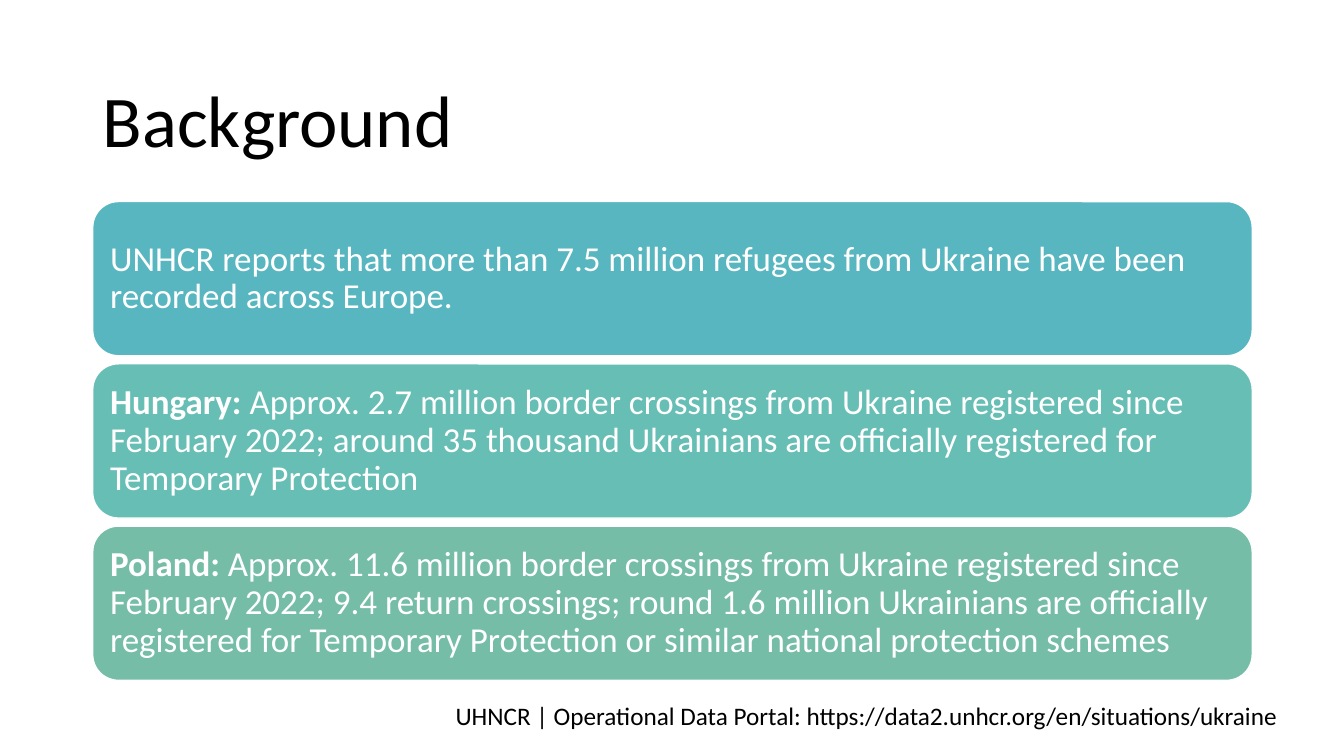
"""Build the Background slide with three stacked fact cards and a source line."""
from dataclasses import dataclass

from pptx import Presentation
from pptx.dml.color import RGBColor
from pptx.enum.shapes import MSO_SHAPE
from pptx.enum.text import MSO_ANCHOR, MSO_AUTO_SIZE, PP_ALIGN
from pptx.util import Inches, Pt

ROUNDED = MSO_SHAPE.ROUNDED_RECTANGLE
MIDDLE, TOP = MSO_ANCHOR.MIDDLE, MSO_ANCHOR.TOP
LEFT = PP_ALIGN.LEFT
FIXED = MSO_AUTO_SIZE.NONE
TITLE_ONLY = 5
FONT = "Calibri"
BLACK, WHITE = "000000", "FFFFFF"
MARGIN, CONTENT_WIDTH = 0.92, 11.5
CARD_TOP, CARD_HEIGHT, CARD_STEP = 2.0, 1.53, 1.61


@dataclass
class Card:
    fill: str
    text: str
    country: str = ""


CARDS = [
    Card("58B6C0", "UNHCR reports that more than 7.5 million refugees from Ukraine "
         "have been recorded across Europe."),
    Card("67BEB5", "Approx. 2.7 million border crossings from Ukraine registered since "
         "February 2022; around 35 thousand Ukrainians are officially registered for "
         "Temporary Protection", "Hungary: "),
    Card("75BDA7", "Approx. 11.6 million border crossings from Ukraine registered since "
         "February 2022; 9.4 return crossings; round 1.6 million Ukrainians are officially "
         "registered for Temporary Protection or similar national protection schemes",
         "Poland: "),
]
SOURCE = "UHNCR | Operational Data Portal: https://data2.unhcr.org/en/situations/ukraine"


def color(value: str) -> RGBColor:
    return RGBColor.from_string(value)


def write(box, text: str, *, size: float, ink: str, lead: str = "",
          spacing: float = 1.0, anchor=MIDDLE) -> None:
    frame = box.text_frame
    frame.word_wrap = True
    frame.auto_size = FIXED
    frame.vertical_anchor = anchor
    para = frame.paragraphs[0]
    para.alignment = LEFT
    para.line_spacing = spacing
    for part, bold in ((lead, True), (text, False)):
        if part:
            span = para.add_run()
            span.text = part
            span.font.name = FONT
            span.font.size = Pt(size)
            span.font.bold = bold
            span.font.color.rgb = color(ink)


def add_title(page, text: str) -> None:
    title = page.shapes.title
    title.left, title.top = Inches(MARGIN), Inches(0.61)
    title.width, title.height = Inches(CONTENT_WIDTH), Inches(1.24)
    write(title, text, size=52, ink=BLACK, spacing=0.9)


def add_card(page, card: Card, top: float) -> None:
    box = page.shapes.add_shape(ROUNDED, Inches(MARGIN), Inches(top),
                                Inches(CONTENT_WIDTH), Inches(CARD_HEIGHT))
    box.shadow.inherit = False
    box.fill.solid()
    box.fill.fore_color.rgb = color(card.fill)
    box.line.color.rgb = color(WHITE)
    box.line.width = Pt(1)
    frame = box.text_frame
    frame.margin_left = frame.margin_right = Inches(0.1)
    frame.margin_top = frame.margin_bottom = Inches(0.1)
    write(box, card.text, lead=card.country, size=25, ink=WHITE, spacing=0.9)


def add_source(page, text: str) -> None:
    box = page.shapes.add_textbox(Inches(4.42), Inches(6.9), Inches(8.45), Inches(0.41))
    write(box, text, size=18, ink=BLACK, anchor=TOP)


def main() -> None:
    deck = Presentation()
    deck.slide_width, deck.slide_height = Inches(13.33), Inches(7.5)
    page = deck.slides.add_slide(deck.slide_layouts[TITLE_ONLY])
    add_title(page, "Background")
    for index, card in enumerate(CARDS):
        add_card(page, card, CARD_TOP + index * CARD_STEP)
    add_source(page, SOURCE)
    deck.save("out.pptx")


if __name__ == "__main__":
    main()
